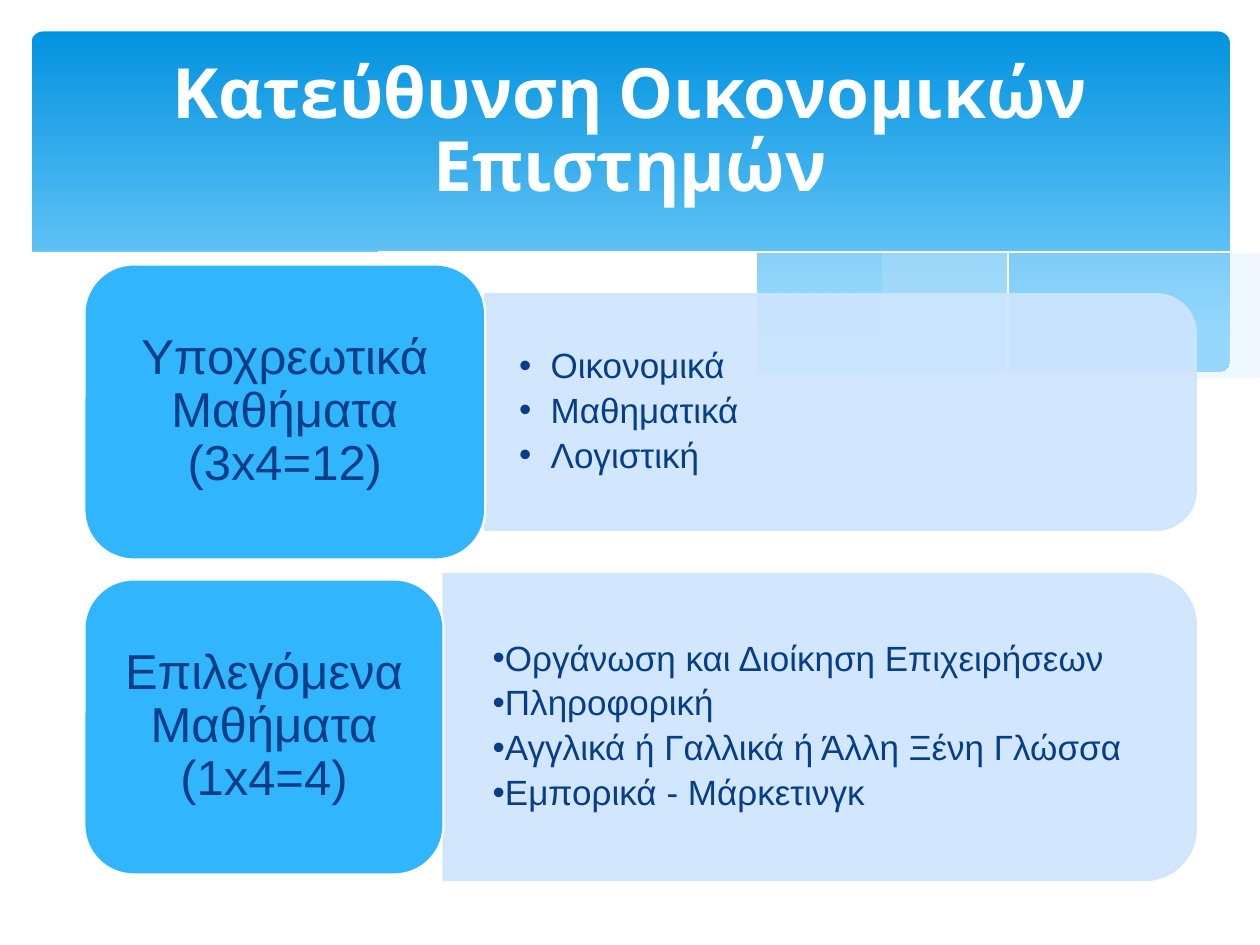
from lxml.etree import SubElement
from pptx import Presentation
from pptx.dml.color import RGBColor
from pptx.enum.shapes import MSO_SHAPE
from pptx.enum.text import MSO_ANCHOR, MSO_AUTO_SIZE, PP_ALIGN
from pptx.oxml.ns import qn
from pptx.util import Emu, Inches, Pt

COLORS = {
    "sky_top": "0293E0", "sky_bottom": "83D3FE", "mist": "C6E7FC",
    "white": "FFFFFF", "label": "31B6FD", "panel": "CEE5FE", "ink": "073E87",
}
LEFT, RIGHT = 0.67, 9.49
ROW_CENTER, ROW_PITCH, LABEL_HEIGHT = 3.27, 2.5, 2.34

ROWS = [
    {"label": "Υποχρεωτικά Μαθήματα (3x4=12)", "label_width": 3.18,
     "panel_height": 1.87, "indent": (0.25, -0.25),
     "items": ["Οικονομικά", "Μαθηματικά", "Λογιστική"]},
    {"label": "Επιλεγόμενα Μαθήματα (1x4=4)", "label_width": 2.85,
     "panel_height": 2.43, "indent": (0.12, 0),
     "items": ["Οργάνωση και Διοίκηση Επιχειρήσεων", "Πληροφορική",
               "Αγγλικά ή Γαλλικά ή Άλλη Ξένη Γλώσσα", "Εμπορικά - Μάρκετινγκ"]},
]

RIGHT_MIST_TOP = [(9.76, 2), (9.35, 2.07), (8.91, 2.16), (8.32, 2.3),
                  (7.79, 2.42), (7.29, 2.53), (6.61, 2.65)]
RIGHT_MIST_BASE = [(6.61, 2.65), (7.05, 2.71), (7.57, 2.76), (8.14, 2.78),
                   (8.63, 2.75), (9.05, 2.69), (9.42, 2.59), (9.76, 2.47)]
MIST_TOP = [(8.93, 2.73), (8.37, 2.65), (7.75, 2.54), (7.06, 2.4), (6.29, 2.22),
            (5.69, 2.08), (5.14, 1.98), (4.65, 1.91), (4.2, 1.87), (3.8, 1.85),
            (3.28, 1.87), (2.86, 1.91)]
MIST_BASE = [(2.86, 1.91), (3.42, 1.99), (4.04, 2.11), (4.49, 2.22), (5.3, 2.4),
             (6.01, 2.55), (6.65, 2.66), (7.22, 2.74), (7.73, 2.77), (8.28, 2.78),
             (8.93, 2.73)]
FALLING_LINE = [(3.09, 1.95), (3.53, 1.89), (4.01, 1.87), (4.5, 1.88), (5.1, 1.92),
                (5.82, 2), (6.65, 2.13), (7.27, 2.26), (7.95, 2.41), (8.69, 2.61),
                (9.07, 2.72)]
RISING_LINE = [(6.13, 2.57), (6.72, 2.41), (7.2, 2.29), (7.76, 2.16), (8.36, 2.04),
               (8.95, 1.94), (9.38, 1.88), (9.75, 1.85)]
FOREGROUND = [(9.77, 2.46), (9.4, 2.59), (8.99, 2.69), (8.5, 2.75), (8.09, 2.77),
              (7.61, 2.75), (7.08, 2.7), (6.48, 2.62), (5.79, 2.5), (5.03, 2.33),
              (4.47, 2.2), (3.91, 2.07), (3.4, 1.97), (2.92, 1.9), (2.5, 1.86),
              (1.93, 1.84), (1.46, 1.85), (1.06, 1.89), (0.76, 1.95), (0.46, 2.03),
              (0.23, 2.13)]


def rgb(name):
    return RGBColor.from_string(COLORS[name])


def apply(obj, **values):
    for name, value in values.items():
        setattr(obj, name, value)


def place(sp, left, top, width, height):
    apply(sp, left=Inches(left), top=Inches(top),
          width=Inches(width), height=Inches(height))


def set_alpha(sp, percent):
    for color in sp.element.spPr.iter(qn("a:srgbClr")):
        SubElement(color, qn("a:alpha"), val=str(percent * 1000))


def paint(sp, fill=None, line=None, width=1.25, alpha=None):
    sp.shadow.inherit = False
    for part, color in ((sp.fill, fill), (sp.line.fill, line)):
        if color:
            part.solid()
            part.fore_color.rgb = rgb(color)
        else:
            part.background()
    if line:
        sp.line.width = Pt(width)
    if alpha:
        set_alpha(sp, alpha)


def smooth(knots, steps=6):
    ends = [knots[0], *knots, knots[-1]]
    curve = [knots[0]]
    for a, b, c, d in zip(ends, ends[1:], ends[2:], ends[3:]):
        for t in (i / steps for i in range(1, steps + 1)):
            curve.append(tuple(
                q + t / 2 * (r - p + t * (2 * p - 5 * q + 4 * r - s
                                          + t * (3 * (q - r) + s - p)))
                for p, q, r, s in zip(a, b, c, d)))
    return curve


def add_wave(s, points, close=True, **look):
    builder = s.shapes.build_freeform(*points[0], scale=Inches(1))
    builder.add_line_segments(points[1:], close=close)
    paint(builder.convert_to_shape(), **look)


def add_backdrop(s):
    sky = s.shapes.add_shape(MSO_SHAPE.ROUNDED_RECTANGLE, 0, 0, 0, 0)
    place(sky, 0.25, 0.25, 9.51, 2.7)
    sky.adjustments[0] = 0.034
    paint(sky)
    sky.fill.gradient()
    sky.fill.gradient_angle = 270
    stops = (("sky_top", 0), ("sky_bottom", 0.9))
    for stop, (color, position) in zip(sky.fill.gradient_stops, stops):
        stop.color.rgb = rgb(color)
        stop.position = position
    add_wave(s, smooth(RIGHT_MIST_TOP) + smooth(RIGHT_MIST_BASE), fill="mist", alpha=29)
    add_wave(s, smooth(MIST_TOP) + smooth(MIST_BASE), fill="mist", alpha=40)
    for knots in (FALLING_LINE, RISING_LINE):
        add_wave(s, smooth(knots), close=False, line="white", width=0)
    add_wave(s, smooth(FOREGROUND) + [(0.23, 3.29), (9.77, 3.29)], fill="white")


def bring_to_front(sp):
    sp.element.getparent().append(sp.element)


def set_frame(tf, x_inset, y_inset):
    apply(tf, word_wrap=True, auto_size=MSO_AUTO_SIZE.NONE,
          vertical_anchor=MSO_ANCHOR.MIDDLE,
          margin_left=Inches(x_inset), margin_right=Inches(x_inset),
          margin_top=Inches(y_inset), margin_bottom=Inches(y_inset))


def write(p, text, size, color="ink", font="Arial", bold=False, **layout):
    apply(p, **{"line_spacing": 0.9, "space_before": Pt(0), **layout})
    r = p.add_run()
    r.text = text
    apply(r.font, size=Pt(size), name=font, bold=bold)
    r.font.color.rgb = rgb(color)


def add_bullet(p, margin, indent):
    pPr = p._p.get_or_add_pPr()
    pPr.set("marL", str(Inches(margin)))
    pPr.set("indent", str(Inches(indent)))
    SubElement(pPr, qn("a:buFont"), typeface="Arial")
    SubElement(pPr, qn("a:buChar"), char="•")


def add_title(sp, text):
    place(sp, 0.5, 0.37, 9, 1.37)
    set_frame(sp.text_frame, 0.1, 0.05)
    write(sp.text_frame.paragraphs[0], text, 39.6, "white", "Cabin", True,
          alignment=PP_ALIGN.CENTER, line_spacing=0.88)
    bring_to_front(sp)


def add_panel(s, left, center, width, height):
    sp = s.shapes.add_shape(MSO_SHAPE.ROUND_2_SAME_RECTANGLE, 0, 0, 0, 0)
    place(sp, left + (width - height) / 2, center - width / 2, height, width)
    sp.rotation = 90
    paint(sp, "panel", "panel", alpha=90)


def add_list(sp, items, indent, left, center, width, height):
    place(sp, left, center - height / 2, width, height)
    tf = sp.text_frame
    set_frame(tf, 0.27, 0.14)
    for i, item in enumerate(items):
        p = tf.add_paragraph() if i else tf.paragraphs[0]
        write(p, item, 20, space_after=Pt(4))
        add_bullet(p, *indent)
    bring_to_front(sp)


def add_label(s, text, center, width):
    sp = s.shapes.add_shape(MSO_SHAPE.ROUNDED_RECTANGLE, 0, 0, 0, 0)
    place(sp, LEFT, center - LABEL_HEIGHT / 2, width, LABEL_HEIGHT)
    paint(sp, "label", "white")
    set_frame(sp.text_frame, 0.12, 0.06)
    write(sp.text_frame.paragraphs[0], text, 28, alignment=PP_ALIGN.CENTER)


def main():
    prs = Presentation()
    apply(prs, slide_width=Inches(10), slide_height=Inches(7.5))
    s = prs.slides.add_slide(prs.slide_layouts[3])
    title, *bodies = s.placeholders
    add_backdrop(s)
    add_title(title, "Κατεύθυνση Οικονομικών Επιστημών")
    for i, (row, body) in enumerate(zip(ROWS, bodies)):
        center = ROW_CENTER + i * ROW_PITCH
        left = LEFT + row["label_width"]
        width, height = RIGHT - left, row["panel_height"]
        add_panel(s, left, center, width, height)
        add_list(body, row["items"], row["indent"], left, center,
                 width - 0.1, height - 0.2)
        add_label(s, row["label"], center, row["label_width"])
    prs.save("out.pptx")


if __name__ == "__main__":
    main()
